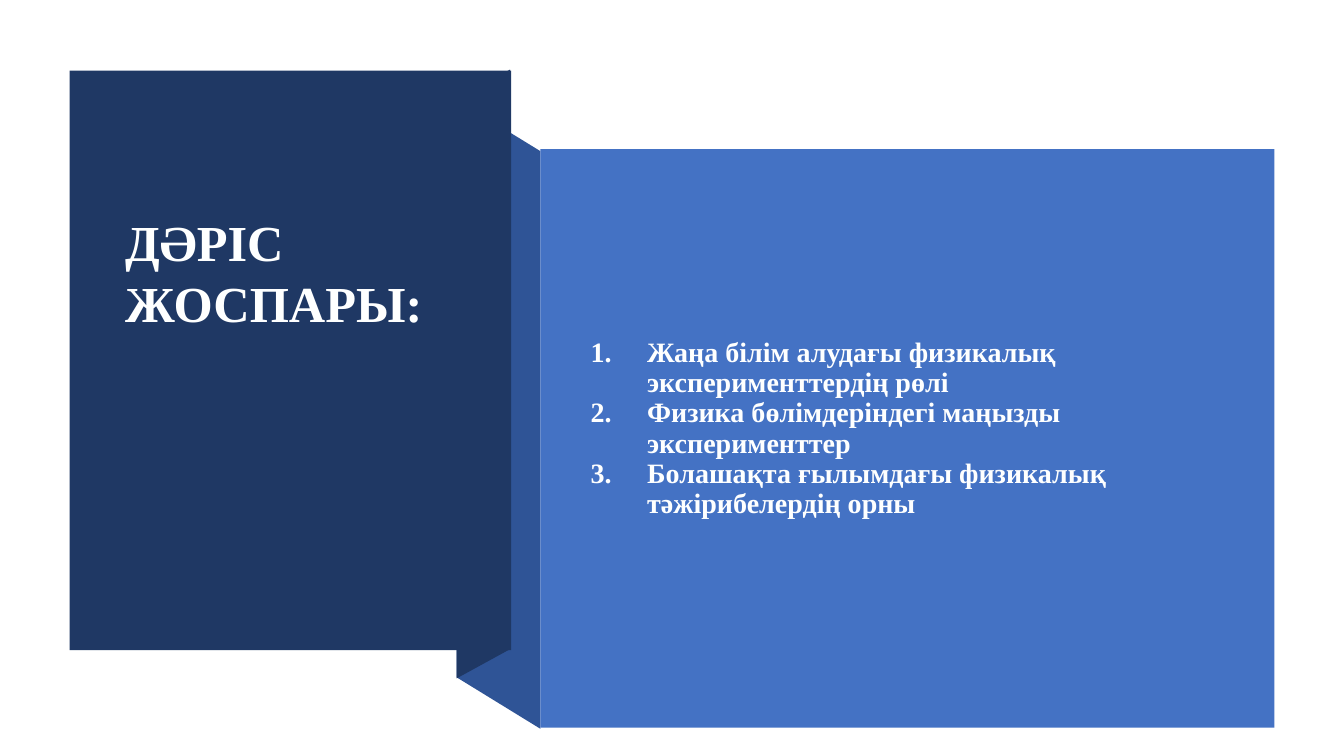
from lxml import etree
from pptx import Presentation
from pptx.dml.color import RGBColor
from pptx.enum.shapes import MSO_SHAPE
from pptx.enum.text import MSO_ANCHOR, MSO_AUTO_SIZE, PP_ALIGN
from pptx.oxml.ns import qn
from pptx.util import Pt

PX = 9144
TITLE_ONLY = 5
RECTANGLE = MSO_SHAPE.RECTANGLE
MIDDLE = MSO_ANCHOR.MIDDLE
NO_AUTOFIT = MSO_AUTO_SIZE.NONE
LEFT = PP_ALIGN.LEFT

THEME = {
    "font": "Times New Roman",
    "title_size": Pt(36),
    "list_size": Pt(20),
    "text": RGBColor.from_string("FEFFFF"),
    "dark": RGBColor.from_string("1F3864"),
    "fold": RGBColor.from_string("2F5496"),
    "panel": RGBColor.from_string("4472C4"),
}


def paint(shape, color):
    shape.fill.solid()
    shape.fill.fore_color.rgb = THEME[color]
    shape.line.fill.background()
    shape.shadow.inherit = False


def format_text(paragraph, size, line_spacing):
    paragraph.alignment = LEFT
    paragraph.line_spacing = line_spacing
    for run in paragraph.runs:
        run.font.name = THEME["font"]
        run.font.size = THEME[size]
        run.font.bold = True
        run.font.color.rgb = THEME["text"]


presentation = Presentation()
presentation.slide_width = 1333 * PX
presentation.slide_height = 750 * PX
slide = presentation.slides.add_slide(presentation.slide_layouts[TITLE_ONLY])

ribbon_folds = [
    ("fold", [(536, 723), (453, 672), (453, 99), (536, 150)]),
    ("dark", [(506, 644), (453, 673), (453, 98), (506, 69)]),
]
for color, points in ribbon_folds:
    builder = slide.shapes.build_freeform(*points[0], scale=PX)
    builder.add_line_segments(points[1:], close=True)
    paint(builder.convert_to_shape(), color)

panels = [
    ("dark", (69, 70, 438, 575)),
    ("panel", (536, 148, 728, 574)),
]
for color, box in panels:
    panel = slide.shapes.add_shape(RECTANGLE, *[length * PX for length in box])
    paint(panel, color)

plan_items = [
    "Жаңа білім алудағы физикалық эксперименттердің рөлі",
    "Физика бөлімдеріндегі маңызды эксперименттер",
    "Болашақта ғылымдағы физикалық тәжірибелердің орны",
]
plan = slide.shapes.add_textbox(576 * PX, 245 * PX, 650 * PX, 361 * PX)
plan.text_frame.word_wrap = True
plan.text_frame.vertical_anchor = MIDDLE
plan.text_frame.text = "\n".join(plan_items)
for paragraph in plan.text_frame.paragraphs:
    format_text(paragraph, "list_size", 0.9)
    properties = paragraph._p.get_or_add_pPr()
    properties.set("marL", str(56 * PX))
    properties.set("indent", str(-56 * PX))
    bullet_color = etree.SubElement(properties, qn("a:buClr"))
    etree.SubElement(bullet_color, qn("a:srgbClr"), val=str(THEME["text"]))
    etree.SubElement(properties, qn("a:buFont"), typeface="+mj-lt")
    etree.SubElement(properties, qn("a:buAutoNum"), type="arabicPeriod")

title = slide.shapes.title
title.left, title.top, title.width, title.height = 114 * PX, 204 * PX, 404 * PX, 131 * PX
title.text_frame.word_wrap = True
title.text_frame.auto_size = NO_AUTOFIT
title.text_frame.vertical_anchor = MIDDLE
title.text_frame.text = "ДӘРІС ЖОСПАРЫ:"
format_text(title.text_frame.paragraphs[0], "title_size", 1.0)
slide.shapes._spTree.append(title._element)

presentation.save("out.pptx")
